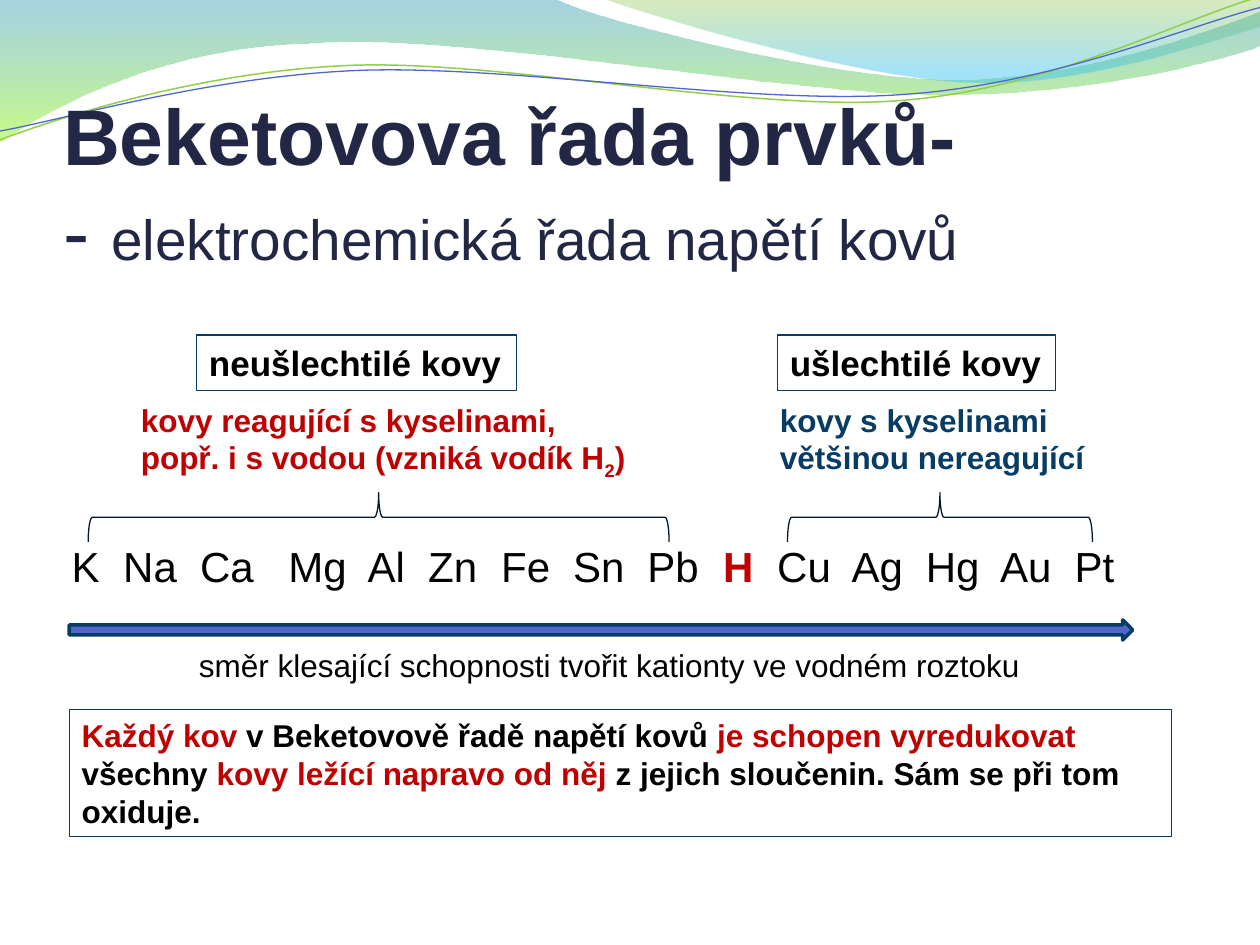
from lxml import etree
from pptx import Presentation
from pptx import util as u
from pptx.dml.color import RGBColor
from pptx.enum import shapes, text
from pptx.oxml.ns import qn

FONT = "Arial"
BLACK, RED = RGBColor(0, 0, 0), RGBColor(0xC0, 0, 0)
NAVY, TITLE_INK = RGBColor(0x07, 0x3C, 0x65), RGBColor(0x21, 0x27, 0x45)
BRACE_INK, BLUE = RGBColor(0x03, 0x18, 0x28), RGBColor(0x4E, 0x67, 0xC8)
LIME, GREEN = RGBColor(0x93, 0xCE, 0x48), RGBColor(0x7E, 0xBE, 0x2C)
TEAL, ACID = RGBColor(0x3B, 0x9C, 0xBF), RGBColor(0x9C, 0xFA, 0x24)
SKY = RGBColor(0x39, 0xC1, 0xF1)

# Paths in inches: a pair is a straight step, six numbers are a Bezier step.
# Gradient stops: position, colour, opacity in percent.
WAVES = [
    ([(0, 0), (4.4, -0.01), (4.76, 0.17, 6.64, 0.63, 7.58, 0.63),
      (8.53, 0.63, 9.58, 0.26, 10, 0.09), (10.01, 0.36),
      (9.83, 0.44, 8.7, 0.76, 7.46, 0.75), (6.22, 0.75, 3.82, 0.28, 2.57, 0.34),
      (1.29, 0.36, 0.46, 0.83, -0.01, 1.13), (0, 0)],
     [(0, TEAL, 45), (1, ACID, 55)]),
    ([(4.79, -0.01), (5.09, 0.11, 6.82, 0.62, 7.69, 0.65),
      (8.56, 0.69, 9.61, 0.32, 10, 0.21), (10, 0), (4.79, -0.01)],
     [(0, GREEN, 30), (0.8, SKY, 45)]),
]
STRANDS = [
    ([(0, 1.11), (0.48, 0.93, 1.58, 0.57, 2.77, 0.52),
      (3.95, 0.47, 5.93, 0.89, 7.13, 0.8), (8.33, 0.71, 9.38, 0.15, 9.98, -0.02)],
     LIME, 0.85),
    ([(0, 1.04), (0.47, 0.96, 1.64, 0.61, 2.83, 0.56),
      (4.03, 0.51, 5.97, 0.84, 7.17, 0.75), (8.36, 0.67, 9.41, 0.21, 10, 0.06)],
     BLUE, 0.75),
]

# A line of text is a list of runs: wording and what differs in its format.
TITLE = [[("Beketovova řada prvků-", {"bold": True})],
         [("- ", {}), ("elektrochemická řada napětí kovů", {"size": 32.4})]]
SERIES = [("K", 0.57), ("Na", 0.98), ("Ca", 1.59), ("Mg", 2.29), ("Al", 2.92),
          ("Zn", 3.4), ("Fe", 3.98), ("Sn", 4.55), ("Pb", 5.14), ("H", 5.74),
          ("Cu", 6.17), ("Ag", 6.76), ("Hg", 7.35), ("Au", 7.94), ("Pt", 8.53)]
GROUPS = [
    {"name": "neušlechtilé kovy", "name_at": (1.56, 2.54),
     "note": [[("kovy reagující s kyselinami, popř. i s vodou (vzniká vodík H", {}),
               ("2", {"baseline": -25000}), (")", {})]],
     "note_at": (1.02, 4.06), "color": RED,
     "brace": shapes.MSO_SHAPE.LEFT_BRACE, "turn": 90, "span": (0.7, 5.31)},
    {"name": "ušlechtilé kovy", "name_at": (6.17, 2.21),
     "note": [[("kovy s kyselinami", {})], [("většinou nereagující", {})]],
     "note_at": (6.09, 2.81), "color": NAVY,
     "brace": shapes.MSO_SHAPE.RIGHT_BRACE, "turn": 270, "span": (6.25, 8.67)},
]
DIRECTION = "směr klesající schopnosti tvořit kationty ve vodném roztoku"
RULE = [[("Každý kov ", {"color": RED}), ("v Beketovově řadě napětí kovů ", {}),
         ("je schopen vyredukovat ", {"color": RED}), ("všechny ", {}),
         ("kovy ležící napravo od něj ", {"color": RED}),
         ("z jejich sloučenin. Sám se při tom oxiduje.", {})]]

NAME_TOP, NOTE_TOP, BRACE_TOP, SERIES_TOP = 2.66, 3.13, 3.91, 4.24
BRACE_DEPTH, LEFT = 0.39, 0.55


def inches(*lengths):
    return [u.Inches(length) for length in lengths]


def write(frame, lines, size=18, color=BLACK, bold=False, wrap=True, breaks=False):
    """Fill a frame; with breaks the lines share one paragraph."""
    frame.word_wrap = wrap
    paragraph = frame.paragraphs[0]
    for number, line in enumerate(lines):
        if number and breaks:
            paragraph.add_line_break()
        elif number:
            paragraph = frame.add_paragraph()
        paragraph.alignment = text.PP_ALIGN.LEFT
        for wording, change in line:
            run = paragraph.add_run()
            run.text = wording
            run.font.name = FONT
            run.font.size = u.Pt(change.get("size", size))
            run.font.bold = change.get("bold", bold)
            run.font.color.rgb = change.get("color", color)
            if "baseline" in change:
                run.font._element.set("baseline", str(change["baseline"]))


def add_text(slide, box, lines, **style):
    label = slide.shapes.add_textbox(*inches(*box))
    write(label.text_frame, lines, **style)
    return label


def outline(shape, color, width):
    shape.shadow.inherit = False
    shape.line.color.rgb = color
    shape.line.width = u.Pt(width)


def add_framed_text(slide, box, lines, **style):
    frame = slide.shapes.add_shape(shapes.MSO_SHAPE.RECTANGLE, *inches(*box))
    frame.fill.background()
    outline(frame, NAVY, 0.75)
    write(frame.text_frame, lines, bold=True, **style)


def add_curve(slide, steps, close):
    """Build a freeform, then join each three points of a Bezier step."""
    points = [inches(*step[i:i + 2]) for step in steps for i in range(0, len(step), 2)]
    builder = slide.shapes.build_freeform(*points[0])
    builder.add_line_segments(points[1:], close=close)
    curve = builder.convert_to_shape()
    curve.shadow.inherit = False
    segments = iter(list(curve.element.iter(qn("a:lnTo"))))
    for step in steps[1:]:
        parts = [next(segments) for _ in range(len(step) // 2)]
        if len(parts) == 3:
            bezier = etree.Element(qn("a:cubicBezTo"))
            parts[0].addprevious(bezier)
            for part in parts:
                bezier.append(part[0])
                part.getparent().remove(part)
    return curve


def add_waves(slide):
    for steps, stops in WAVES:
        wave = add_curve(slide, steps, True)
        wave.line.fill.background()
        wave.fill.gradient()
        wave.fill.gradient_angle = 270
        for stop, (position, color, _) in zip(wave.fill.gradient_stops, stops):
            stop.position, stop.color.rgb = position, color
        tints = wave.element.spPr.iter(qn("a:srgbClr"))
        for tint, (_, _, opacity) in zip(list(tints), stops):
            etree.SubElement(tint, qn("a:alpha")).set("val", str(opacity * 1000))
    for steps, color, width in STRANDS:
        strand = add_curve(slide, steps, False)
        strand.fill.background()
        outline(strand, color, width)


def add_title(slide):
    title = slide.shapes.title
    title.left, title.top, title.width, title.height = inches(0.5, 0.77, 9, 1.42)
    frame = title.text_frame
    frame.margin_left = frame.margin_right = frame.margin_bottom = 0
    frame.vertical_anchor = text.MSO_ANCHOR.BOTTOM
    frame.auto_size = text.MSO_AUTO_SIZE.NONE
    write(frame, TITLE, size=45, color=TITLE_INK, breaks=True)
    title.element.getparent().append(title.element)  # in front of the waves


def add_group(slide, group):
    left, width = group["name_at"]
    add_framed_text(slide, (left, NAME_TOP, width, 0.44), [[(group["name"], {})]],
                    size=20, wrap=False)
    left, width = group["note_at"]
    add_text(slide, (left, NOTE_TOP, width, 0.71), group["note"],
             color=group["color"], bold=True)
    start, end = group["span"]
    length = end - start
    # The upright brace turns about its centre into the flat span.
    brace = slide.shapes.add_shape(group["brace"], *inches(
        (start + end - BRACE_DEPTH) / 2, BRACE_TOP + (BRACE_DEPTH - length) / 2,
        BRACE_DEPTH, length))
    brace.rotation = group["turn"]
    brace.fill.background()
    outline(brace, BRACE_INK, 0.75)


def add_series(slide):
    start = SERIES[0][1]
    runs = [("\t" * (x > start) + symbol,
             {"color": RED, "bold": True} if symbol == "H" else {})
            for symbol, x in SERIES]
    row = add_text(slide, (start - 0.1, SERIES_TOP, 9, 0.48), [runs], size=24)
    properties = row.text_frame.paragraphs[0]._p.get_or_add_pPr()
    tabs = etree.SubElement(properties, qn("a:tabLst"))
    for _, x in SERIES[1:]:
        etree.SubElement(tabs, qn("a:tab"), pos=str(u.Inches(x - start)), algn="l")


def main():
    deck = Presentation()
    deck.slide_width, deck.slide_height = inches(10, 7.5)
    slide = deck.slides.add_slide(deck.slide_layouts[5])
    add_waves(slide)
    add_title(slide)
    add_series(slide)
    arrow = slide.shapes.add_shape(shapes.MSO_SHAPE.RIGHT_ARROW,
                                   *inches(LEFT, 4.92, 8.44, 0.16))
    arrow.fill.solid()
    arrow.fill.fore_color.rgb = BLUE
    outline(arrow, NAVY, 2)
    add_text(slide, (1.48, 5.08, 6.88, 0.4), [[(DIRECTION, {})]])
    for group in GROUPS:
        add_group(slide, group)
    add_framed_text(slide, (LEFT, 5.63, 8.75, 1.01), RULE)
    deck.save("out.pptx")


if __name__ == "__main__":
    main()
